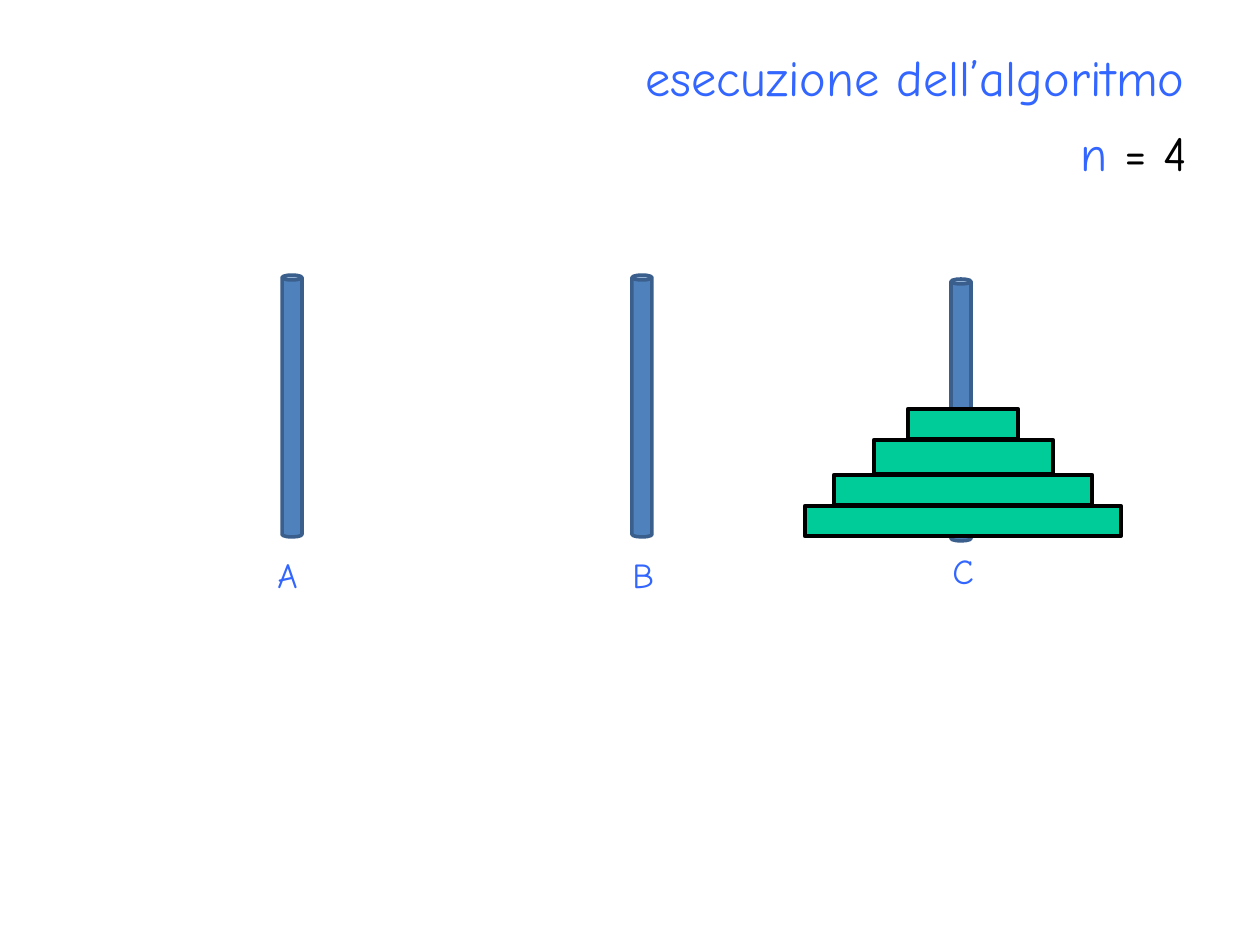
import pptx
import pptx.dml.color
import pptx.enum.shapes
import pptx.enum.text
import pptx.util

SCALE = 914400 // 126  # EMU per px
FONT = "Comic Neue"
COLORS = {
    "text": "3366FF", "number": "000000",
    "peg": "4F81BD", "peg_edge": "3A5F8C",
    "disk": "00CC99", "disk_edge": "000000",
}
SHAPES = pptx.enum.shapes.MSO_SHAPE
ALIGN = pptx.enum.text.PP_ALIGN
ANCHOR = pptx.enum.text.MSO_ANCHOR

# Text blocks: box, spans of (text, colour), size, alignment, anchor, wrap
HEADINGS = [
    ((63, 38, 1134, 77), [("esecuzione dell’algoritmo", "text")],
     28.8, ALIGN.RIGHT, ANCHOR.MIDDLE, True),
    ((1066, 116, 136, 72), [("n", "text"), (" = 4", "number")],
     28, ALIGN.CENTER, ANCHOR.TOP, False),
]
# Pegs: name, left, top, label left, label top, label width
PEGS = [
    ("A", 282, 275, 265, 547, 52),
    ("B", 632, 275, 620, 547, 48),
    ("C", 951, 279, 940, 543, 57),
]
PEG_SIZE = (20, 262)
LABEL_HEIGHT = 55
# Disks on peg C, from the top: top, width, height
DISKS = [(409, 110, 30), (440, 179, 34), (475, 258, 30), (506, 316, 30)]
DISK_CENTER = 963


def px(*lengths):
    return [pptx.util.Emu(length * SCALE) for length in lengths]


def color(name):
    return pptx.dml.color.RGBColor.from_string(COLORS[name])


def add_solid(page, kind, box, name, line_width):
    """Add a preset shape with the fill and edge colours of `name`."""
    shape = page.shapes.add_shape(kind, *px(*box))
    shape.shadow.inherit = False
    shape.fill.solid()
    shape.fill.fore_color.rgb = color(name)
    shape.line.color.rgb = color(name + "_edge")
    shape.line.width = pptx.util.Pt(line_width)


def add_text(page, box, spans, size, align, anchor, wrap):
    frame = page.shapes.add_textbox(*px(*box)).text_frame
    frame.word_wrap = wrap
    frame.vertical_anchor = anchor
    paragraph = frame.paragraphs[0]
    paragraph.alignment = align
    for text, color_name in spans:
        span = paragraph.add_run()
        span.text = text
        span.font.name = FONT
        span.font.size = pptx.util.Pt(size)
        span.font.color.rgb = color(color_name)


def main():
    deck = pptx.Presentation()
    deck.slide_width, deck.slide_height = px(1260, 945)
    page = deck.slides.add_slide(deck.slide_layouts[6])

    for heading in HEADINGS:
        add_text(page, *heading)
    for name, left, top, label_left, label_top, label_width in PEGS:
        add_solid(page, SHAPES.CAN, (left, top, *PEG_SIZE), "peg", 2)
        add_text(page, (label_left, label_top, label_width, LABEL_HEIGHT),
                 [(name, "text")], 20, ALIGN.LEFT, ANCHOR.TOP, False)
    for top, width, height in DISKS:
        left = DISK_CENTER - width // 2
        add_solid(page, SHAPES.RECTANGLE, (left, top, width, height), "disk", 2.5)

    deck.save("out.pptx")


if __name__ == "__main__":
    main()
